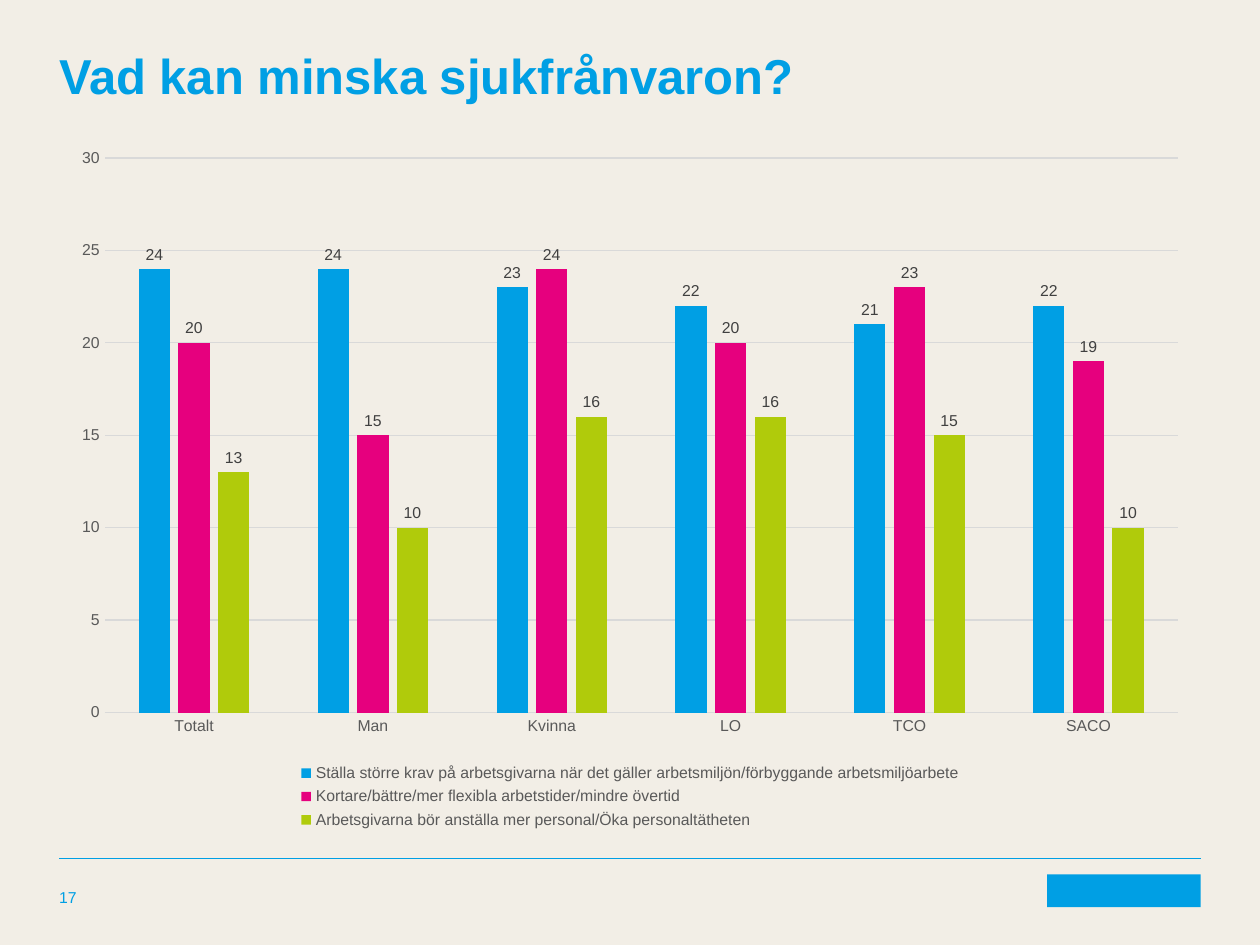
from lxml import etree
from pptx import Presentation
from pptx import util as u
from pptx.chart.data import CategoryChartData
from pptx.dml.color import RGBColor
from pptx.enum import chart as charts, shapes, text
from pptx.oxml import ns

COLORS = {
    "background": "F2EEE6",
    "blue": "009FE4",
    "pink": "E6007E",
    "green": "B0CB0B",
    "grid": "D9D9D9",
    "axis": "595959",
    "label": "404040",
}
FONT = "Arial"
LEFT, WIDTH = 0.47, 9.06
GROUPS = ["Totalt", "Man", "Kvinna", "LO", "TCO", "SACO"]
MEASURES = [
    ("Ställa större krav på arbetsgivarna när det gäller "
     "arbetsmiljön/förbyggande arbetsmiljöarbete",
     [24, 24, 23, 22, 21, 22], "blue"),
    ("Kortare/bättre/mer flexibla arbetstider/mindre övertid",
     [20, 15, 24, 20, 23, 19], "pink"),
    ("Arbetsgivarna bör anställa mer personal/Öka personaltätheten",
     [13, 10, 16, 16, 15, 10], "green"),
]


def color(name):
    return RGBColor.from_string(COLORS[name])


def style_font(font, size, name, bold=False):
    font.name = FONT
    font.size = u.Pt(size)
    font.bold = bold
    font.color.rgb = color(name)


def style_line(line, name, width):
    line.color.rgb = color(name)
    line.width = u.Pt(width)


def add_text(page, left, top, width, height, words, size, bold=False,
             anchor=text.MSO_ANCHOR.TOP):
    box = page.shapes.add_textbox(*map(u.Inches, (left, top, width, height)))
    frame = box.text_frame
    frame.word_wrap = True
    frame.vertical_anchor = anchor
    frame.margin_left = frame.margin_right = 0
    frame.margin_top = frame.margin_bottom = 0
    span = frame.paragraphs[0].add_run()
    span.text = words
    style_font(span.font, size, "blue", bold)


def add_bar_chart(page, left, top, width, height):
    data = CategoryChartData(number_format="###0")
    data.categories = GROUPS
    for name, values, _ in MEASURES:
        data.add_series(name, values)
    chart = page.shapes.add_chart(
        charts.XL_CHART_TYPE.COLUMN_CLUSTERED,
        *map(u.Inches, (left, top, width, height)), data).chart
    chart.font.name = FONT
    chart.font.size = u.Pt(10)
    chart.has_title = False

    # Legend
    chart.has_legend = True
    chart.legend.position = charts.XL_LEGEND_POSITION.BOTTOM
    chart.legend.include_in_layout = False
    style_font(chart.legend.font, 9, "axis")

    # Axes
    for axis in (chart.category_axis, chart.value_axis):
        axis.major_tick_mark = charts.XL_TICK_MARK.NONE
        axis.minor_tick_mark = charts.XL_TICK_MARK.NONE
        style_font(axis.tick_labels.font, 9, "axis")
    style_line(chart.category_axis.format.line, "grid", 0.75)
    scale = chart.value_axis
    scale.minimum_scale, scale.maximum_scale, scale.major_unit = 0, 30, 5
    scale.format.line.fill.background()
    scale.has_major_gridlines = True
    style_line(scale.major_gridlines.format.line, "grid", 0.75)
    scale.tick_labels.number_format = "###0"
    scale.tick_labels.number_format_is_linked = False

    # Columns and their values
    plot = chart.plots[0]
    plot.vary_by_categories = False
    plot.gap_width = 219
    plot.overlap = -27
    for series, (_, _, name) in zip(plot.series, MEASURES):
        series.format.fill.solid()
        series.format.fill.fore_color.rgb = color(name)
        labels = series.data_labels
        labels.show_value = True
        labels.number_format = "###0"
        labels.number_format_is_linked = False
        labels.position = charts.XL_LABEL_POSITION.OUTSIDE_END
        style_font(labels.font, 9, "label")


def add_footer(page, left, top, width, number):
    # Rule across the page
    rule = page.shapes.add_connector(
        shapes.MSO_CONNECTOR.STRAIGHT, u.Inches(left), u.Inches(top),
        u.Inches(left + width), u.Inches(top))
    style_line(rule.line, "blue", 0.5)
    etree.SubElement(rule.line._get_or_add_ln().getparent(),
                     ns.qn("a:effectLst"))

    # Page number
    row = top + 0.13
    add_text(page, left, row, 2.36, 0.26, number, 9,
             anchor=text.MSO_ANCHOR.BOTTOM)

    # Plain block in the sender's corner
    block_width = 1.22
    block = page.shapes.add_shape(
        shapes.MSO_SHAPE.RECTANGLE, u.Inches(left + width - block_width),
        u.Inches(row), u.Inches(block_width), u.Inches(0.26))
    block.shadow.inherit = False
    block.fill.solid()
    block.fill.fore_color.rgb = color("blue")
    block.line.fill.background()


def main():
    deck = Presentation()
    deck.slide_width, deck.slide_height = u.Inches(10), u.Inches(7.5)
    page = deck.slides.add_slide(deck.slide_layouts[6])
    page.background.fill.solid()
    page.background.fill.fore_color.rgb = color("background")

    add_footer(page, LEFT, 6.81, WIDTH, "17")
    add_text(page, LEFT, 0.36, WIDTH, 1.65,
             "Vad kan minska sjukfrånvaron?", 28, bold=True)
    add_bar_chart(page, LEFT, 1.07, WIDTH, 5.55)
    deck.save("out.pptx")


if __name__ == "__main__":
    main()
